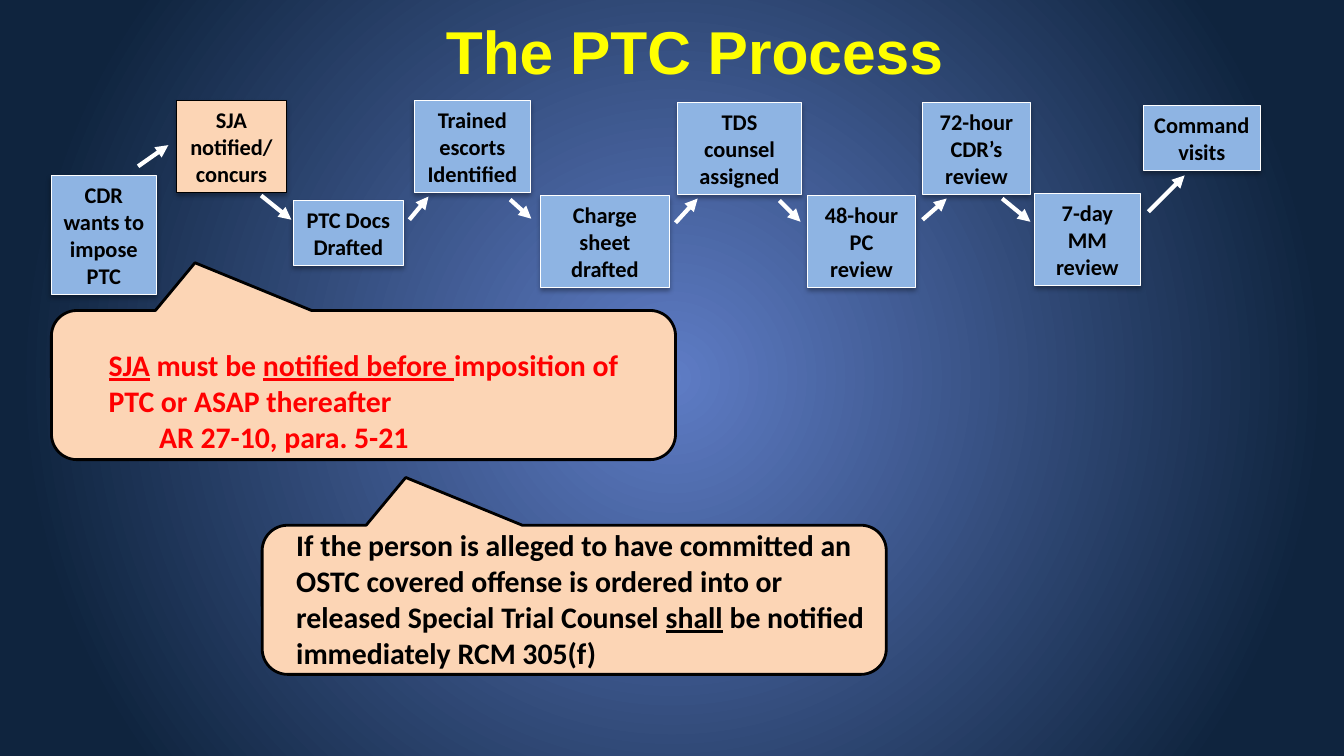
from pptx import Presentation
from pptx.dml.color import RGBColor
from pptx.enum.shapes import MSO_CONNECTOR, MSO_SHAPE
from pptx.enum.text import MSO_ANCHOR, PP_ALIGN
from pptx.oxml import parse_xml
from pptx.oxml.ns import nsdecls, qn
from pptx.util import Inches, Pt

NAVY = RGBColor(0x0F, 0x24, 0x3E)
GLOW = RGBColor(0x5E, 0x7C, 0xC5)
BLUE = RGBColor(0x8E, 0xB4, 0xE3)
PEACH = RGBColor(0xFC, 0xD5, 0xB5)
YELLOW = RGBColor(0xFF, 0xFF, 0x00)
RED = RGBColor(0xFF, 0x00, 0x00)
WHITE = RGBColor(0xFF, 0xFF, 0xFF)
BLACK = RGBColor(0x00, 0x00, 0x00)


def add_bold_run(p, text, size, color, font="Calibri", underline=False):
    r = p.add_run()
    r.text = text
    r.font.name, r.font.size, r.font.bold = font, Pt(size), True
    r.font.color.rgb = color
    if underline:
        r.font.underline = True


def add_filled_shape(kind, box, fill, line, line_width):
    sp = s.shapes.add_shape(kind, *map(Inches, box))
    sp.shadow.inherit = False
    sp.fill.solid()
    sp.fill.fore_color.rgb = fill
    sp.line.color.rgb = line
    sp.line.width = Pt(line_width)
    return sp


prs = Presentation()
prs.slide_width, prs.slide_height = Inches(13.33), Inches(7.5)
s = prs.slides.add_slide(prs.slide_layouts[6])

# Background: glow in the centre fading to navy
fill = s.background.fill
fill.gradient()
for stop, color, position in zip(fill.gradient_stops, (GLOW, NAVY), (0, 0.85)):
    stop.color.rgb = color
    stop.position = position
grad = s.element.find(".//" + qn("a:gradFill"))
grad.replace(grad.find(qn("a:lin")), parse_xml(
    f'<a:path {nsdecls("a")} path="circle">'
    '<a:fillToRect l="50000" t="50000" r="50000" b="50000"/></a:path>'))

# Title
title = s.shapes.add_textbox(Inches(0.77), Inches(0.08), Inches(12.24), Inches(0.83))
tf = title.text_frame
tf.word_wrap = True
tf.vertical_anchor = MSO_ANCHOR.MIDDLE
tf.paragraphs[0].alignment = PP_ALIGN.CENTER
add_bold_run(tf.paragraphs[0], "The PTC Process", 43.2, YELLOW, "Arial")

# Process steps
steps = [
    ((0.51, 1.74, 1.04, 1.18), ["CDR wants to impose PTC"], BLUE, WHITE),
    ((1.75, 1.00, 1.09, 0.91), ["SJA notified/ concurs"], PEACH, BLACK),
    ((2.91, 1.99, 1.09, 0.64), ["PTC Docs", "Drafted"], BLUE, WHITE),
    ((4.11, 1.00, 1.15, 0.91), ["Trained escorts Identified"], BLUE, WHITE),
    ((5.36, 1.94, 1.28, 0.91), ["Charge sheet drafted"], BLUE, WHITE),
    ((6.72, 1.02, 1.23, 0.91), ["TDS counsel assigned"], BLUE, WHITE),
    ((8.01, 1.94, 1.07, 0.91), ["48-hour PC review"], BLUE, WHITE),
    ((9.15, 1.02, 1.07, 0.91), ["72-hour CDR’s review"], BLUE, WHITE),
    ((10.26, 1.92, 1.05, 0.91), ["7-day MM review"], BLUE, WHITE),
    ((11.34, 1.05, 1.16, 0.64), ["Command visits"], BLUE, WHITE),
]
for box, lines, fill_color, line_color in steps:
    sp = add_filled_shape(MSO_SHAPE.RECTANGLE, box, fill_color, line_color, 0.75)
    sp.element.spPr.find(qn("a:effectLst")).append(parse_xml(
        f'<a:outerShdw {nsdecls("a")} blurRad="{Pt(3.5)}" dist="{Pt(2.2)}" '
        'dir="5400000" rotWithShape="0"><a:srgbClr val="000000">'
        '<a:alpha val="32000"/></a:srgbClr></a:outerShdw>'))
    tf = sp.text_frame
    tf.word_wrap = True
    for i, line in enumerate(lines):
        p = tf.add_paragraph() if i else tf.paragraphs[0]
        p.alignment = PP_ALIGN.CENTER
        add_bold_run(p, line, 16, BLACK)

# Arrows between steps
arrows = [
    (1.37, 1.65, 1.67, 1.44), (2.59, 1.94, 2.89, 2.18), (4.06, 2.18, 4.25, 1.95),
    (5.06, 1.98, 5.27, 2.17), (6.70, 2.21, 6.92, 1.97), (7.73, 1.99, 7.94, 2.20),
    (9.15, 2.18, 9.39, 1.97), (9.94, 1.97, 10.22, 2.20), (11.39, 2.10, 11.75, 1.74),
]
for ends in arrows:
    arrow = s.shapes.add_connector(MSO_CONNECTOR.STRAIGHT, *map(Inches, ends))
    arrow.line.color.rgb = WHITE
    arrow.line.width = Pt(3)
    arrow.line._get_or_add_ln().append(
        parse_xml(f'<a:tailEnd {nsdecls("a")} type="triangle"/>'))
    arrow.element.spPr.append(parse_xml(f'<a:effectLst {nsdecls("a")}/>'))

# Callouts, turned so that they point up; their text stands upright in its own box
callouts = [
    ((0.51, 3.08, 6.19, 1.48), (0.98, 3.39, 5.25, 1.18), RED, [
        [("SJA", True), (" must be ", False), ("notified before ", True),
         ("imposition of PTC or ASAP thereafter", False)],
        [("\tAR 27-10, para. 5-21", False)],
    ]),
    ((2.60, 5.21, 6.19, 1.48), (2.84, 5.18, 5.96, 1.54), BLACK, [
        [("If the person is alleged to have committed an OSTC covered offense is "
          "ordered into or released Special Trial Counsel ", False),
         ("shall", True), (" be notified immediately RCM 305(f)", False)],
    ]),
]
for bubble_box, text_box, color, paragraphs in callouts:
    bubble = add_filled_shape(MSO_SHAPE.ROUNDED_RECTANGULAR_CALLOUT, bubble_box,
                              PEACH, BLACK, 2)
    bubble.rotation = 180
    for i, value in enumerate((0.27, 0.82, 0.17)):
        bubble.adjustments[i] = value
    tf = s.shapes.add_textbox(*map(Inches, text_box)).text_frame
    tf.word_wrap = True
    for i, runs in enumerate(paragraphs):
        p = tf.add_paragraph() if i else tf.paragraphs[0]
        for text, underline in runs:
            add_bold_run(p, text, 21.3, color, underline=underline)

prs.save("out.pptx")
